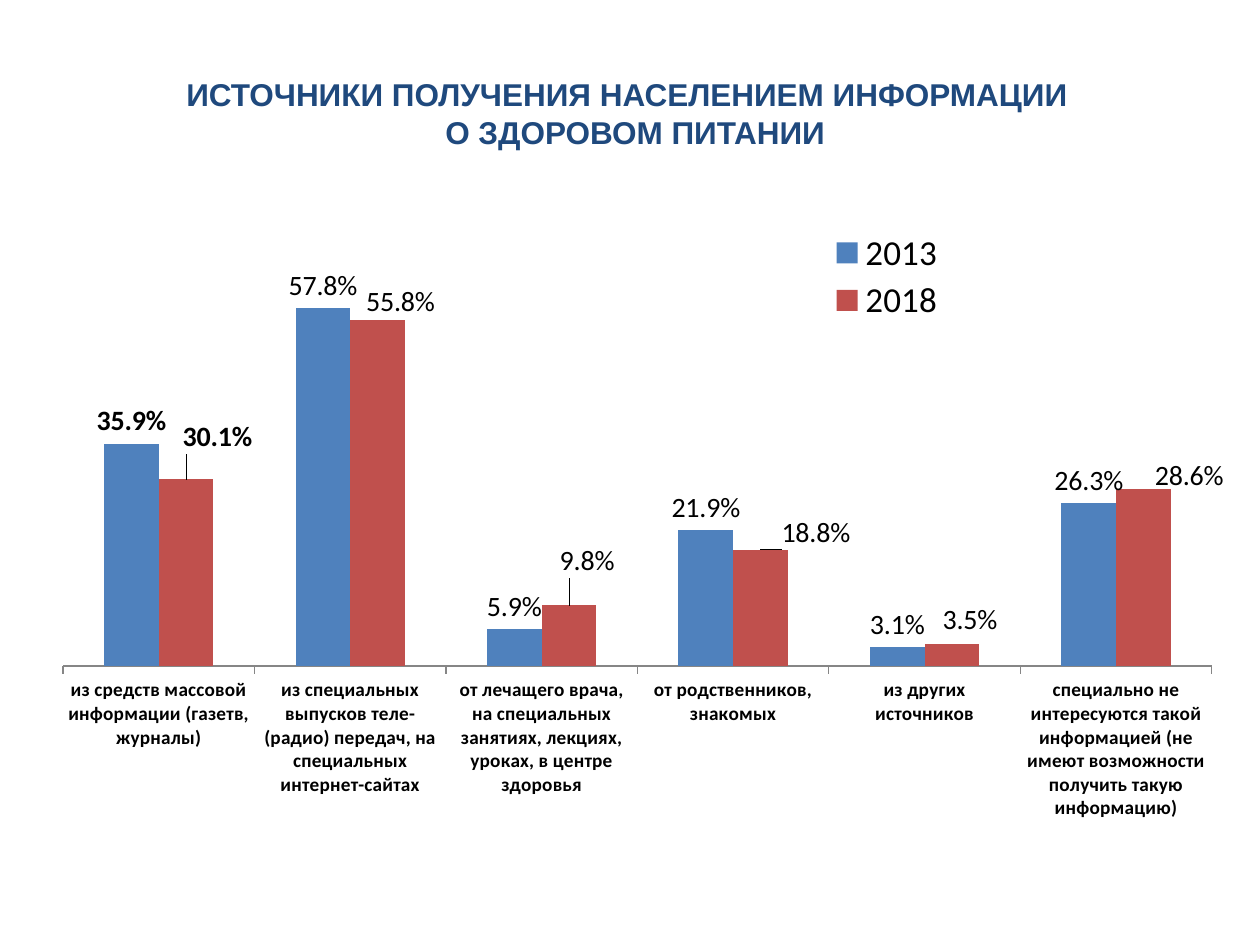
from pptx import Presentation
from pptx.chart.data import CategoryChartData
from pptx.dml.color import RGBColor
from pptx.enum.chart import (XL_CHART_TYPE, XL_LABEL_POSITION,
                             XL_LEGEND_POSITION, XL_TICK_MARK)
from pptx.enum.text import PP_ALIGN
from pptx.oxml.ns import qn
from pptx.oxml.xmlchemy import OxmlElement
from pptx.util import Emu, Pt

COLUMN = XL_CHART_TYPE.COLUMN_CLUSTERED
LABEL_OUTSIDE = XL_LABEL_POSITION.OUTSIDE_END
LEGEND_RIGHT = XL_LEGEND_POSITION.RIGHT
TICK_OUT, TICK_NONE = XL_TICK_MARK.OUTSIDE, XL_TICK_MARK.NONE
CENTER = PP_ALIGN.CENTER

NAVY = RGBColor(0x1F, 0x49, 0x7D)
BLUE = RGBColor(0x4F, 0x81, 0xBD)
RED = RGBColor(0xC0, 0x50, 0x4D)
BLACK = RGBColor(0, 0, 0)
GRAY = RGBColor(0x86, 0x86, 0x86)

PX = 914400 // 126
PERCENT = '0.0"%"'

TITLE = ["ИСТОЧНИКИ ПОЛУЧЕНИЯ НАСЕЛЕНИЕМ ИНФОРМАЦИИ", "О ЗДОРОВОМ ПИТАНИИ"]
CATEGORIES = [
    "из средств массовой информации (газетв, журналы)",
    "из специальных выпусков теле-(радио) передач, на специальных интернет-сайтах",
    "от лечащего врача, на специальных занятиях, лекциях, уроках, в центре здоровья",
    "от родственников, знакомых",
    "из других источников",
    "специально не интересуются такой информацией (не имеют возможности получить такую информацию)",
]
# Name, colour, values, label shifts in px by category index
SERIES = [
    ("2013", BLUE, (35.9, 57.8, 5.9, 21.9, 3.1, 26.3), {}),
    ("2018", RED, (30.1, 55.8, 9.8, 18.8, 3.5, 28.6),
     {0: (31, -20), 1: (23, 4), 2: (18, -22), 3: (55, 6), 4: (18, -2), 5: (46, 9)}),
]
CHART_WIDTH, CHART_HEIGHT = 1203, 764


def set_layout(parent, index, **settings):
    """Give a chart part a manual layout, as the child at this index."""
    for old in parent.findall(qn("c:layout")):
        parent.remove(old)
    layout = OxmlElement("c:layout")
    manual = OxmlElement("c:manualLayout")
    layout.append(manual)
    for name, value in settings.items():
        setting = OxmlElement(f"c:{name}")
        setting.set("val", str(value))
        manual.append(setting)
    parent.insert(index, layout)


class SlideBuilder:
    def __init__(self, deck):
        self.slide = deck.slides.add_slide(deck.slide_layouts[6])

    def style(self, font, size, color=BLACK, bold=False, name="Calibri"):
        font.name, font.size, font.bold = name, Pt(size), bold
        font.color.rgb = color

    def title(self, lines, left, top, width, height):
        box = self.slide.shapes.add_textbox(*(Emu(n * PX) for n in (left, top, width, height)))
        frame = box.text_frame
        frame.word_wrap = True
        frame.margin_right = Emu(24 * PX)
        frame.text = "\n".join(lines)
        for para in frame.paragraphs:
            self.style(para.runs[0].font, 18, NAVY, True, "Arial")
        frame.paragraphs[-1].alignment = CENTER

    def chart(self, left, top):
        data = CategoryChartData(number_format=PERCENT)
        data.categories = CATEGORIES
        for name, _, values, _ in SERIES:
            data.add_series(name, values)
        area = (Emu(n * PX) for n in (left, top, CHART_WIDTH, CHART_HEIGHT))
        chart = self.slide.shapes.add_chart(COLUMN, *area, data).chart
        self.style(chart.font, 18)
        chart.has_title = False
        plot = chart.plots[0]
        plot.gap_width, plot.overlap = 150, 0
        plot.vary_by_categories = False
        set_layout(chart.plots[0]._element.getparent(), 0, layoutTarget="inner",
                   xMode="edge", yMode="edge", x=0.035, y=0.037, w=0.955, h=0.568)
        self.axes(chart)
        self.legend(chart)
        for series, (_, color, _, shifts) in zip(plot.series, SERIES):
            series.format.fill.solid()
            series.format.fill.fore_color.rgb = color
            self.labels(series, shifts)

    def axes(self, chart):
        category, value = chart.category_axis, chart.value_axis
        self.style(category.tick_labels.font, 11, bold=True)
        category.major_tick_mark = TICK_OUT
        category.minor_tick_mark = TICK_NONE
        category.format.line.color.rgb = GRAY
        value.minimum_scale, value.maximum_scale = 0, 70
        value.has_major_gridlines = False
        value.visible = False

    def legend(self, chart):
        chart.has_legend = True
        legend = chart.legend
        legend.position = LEGEND_RIGHT
        legend.include_in_layout = False
        self.style(legend.font, 20)
        set_layout(legend._element, 1, xMode="edge", yMode="edge",
                   x=0.67, y=0.03, w=0.1, h=0.13)

    def labels(self, series, shifts):
        """Label every column, bold in the first category only."""
        labels = series.data_labels
        labels.show_value = True
        labels.number_format, labels.number_format_is_linked = PERCENT, False
        labels.position = LABEL_OUTSIDE
        self.style(labels.font, 16)
        for index in range(len(CATEGORIES)):
            label = series.points[index].data_label
            self.style(label.font, 16, bold=index == 0)
            label.position = LABEL_OUTSIDE
            if index in shifts:
                across, down = shifts[index]
                element = labels._element.find(f"{qn('c:dLbl')}[{index + 1}]")
                set_layout(element, 1, x=round(across / CHART_WIDTH, 3),
                           y=round(down / CHART_HEIGHT, 3))


def main():
    deck = Presentation()
    deck.slide_width, deck.slide_height = Emu(1260 * PX), Emu(945 * PX)
    builder = SlideBuilder(deck)
    builder.title(TITLE, 174, 69, 934, 89)
    builder.chart(21, 204)
    deck.save("out.pptx")


if __name__ == "__main__":
    main()
